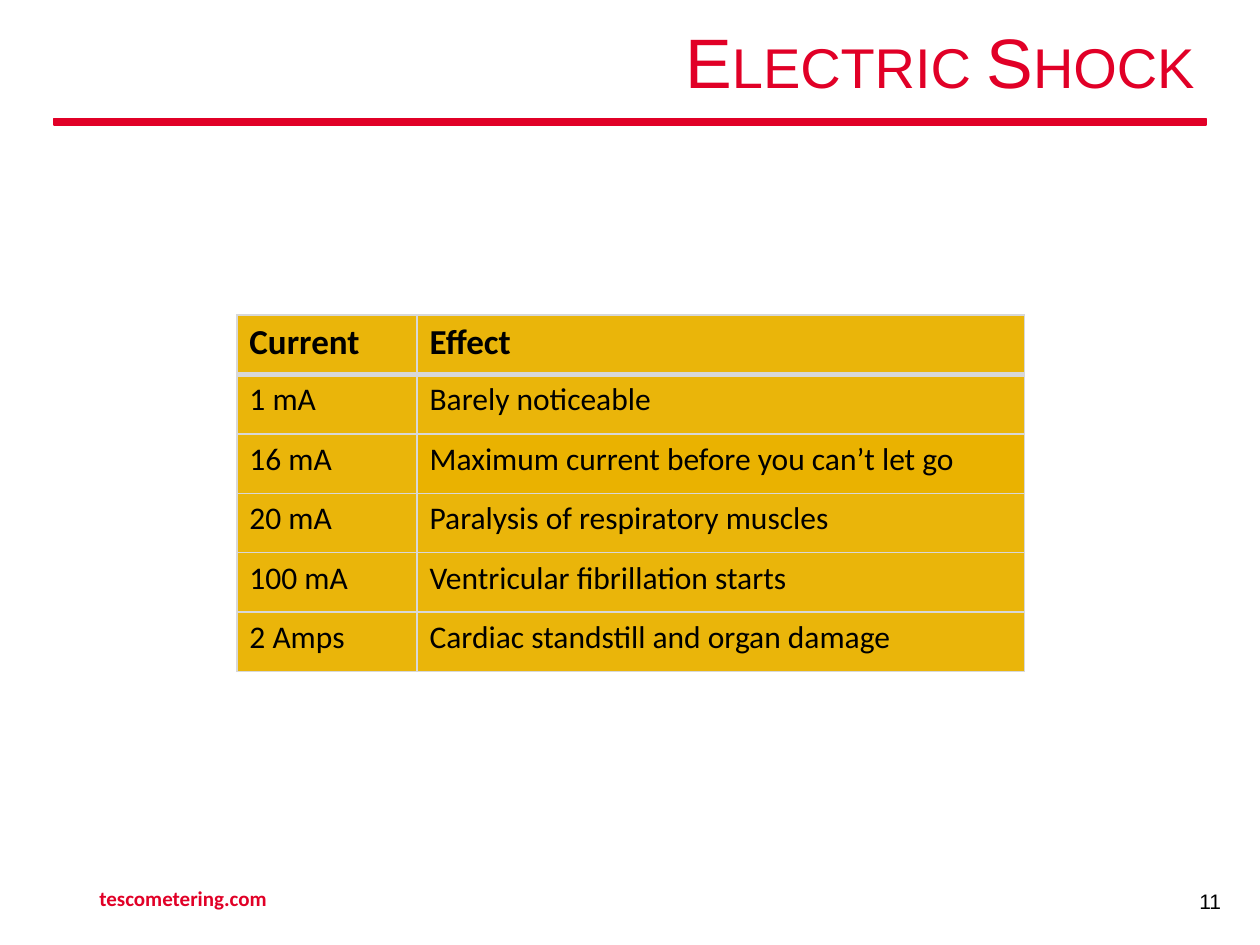
from dataclasses import dataclass
from lxml.etree import SubElement
from pptx import Presentation
from pptx.dml.color import RGBColor
from pptx.enum.shapes import MSO_SHAPE
from pptx.enum.text import MSO_ANCHOR, PP_ALIGN
from pptx.oxml import parse_xml
from pptx.oxml.ns import nsdecls, qn
from pptx.util import Inches, Pt


@dataclass(frozen=True)
class Theme:
    red: str = "E10027"
    gold: str = "EAB200"
    grid: str = "D8D8D8"
    black: str = "000000"
    heading_font: str = "Arial"
    body_font: str = "Calibri"
    title_size: int = 40
    header_size: int = 20
    body_size: int = 18
    footer_size: int = 12
    gold_alpha: int = 96


THEME = Theme()
ROWS = [
    ("Current", "Effect"),
    ("1 mA", "Barely noticeable"),
    ("16 mA", "Maximum current before you can’t let go"),
    ("20 mA", "Paralysis of respiratory muscles"),
    ("100 mA", "Ventricular fibrillation starts"),
    ("2 Amps", "Cardiac standstill and organ damage"),
]
OPAQUE_CELL = (2, 1)


def inches(box):
    return [Inches(v) for v in box]


def write(tf, text, font, size, color, bold=False):
    tf.text = text
    r = tf.paragraphs[0].runs[0]
    r.font.name = font
    r.font.size = Pt(size)
    r.font.bold = bold
    r.font.color.rgb = RGBColor.from_string(color)
    return r


def add_title(s, box, text):
    sp = s.shapes.title
    sp.left, sp.top, sp.width, sp.height = inches(box)
    tf = sp.text_frame
    r = write(tf, text, THEME.heading_font, THEME.title_size, THEME.red)
    r.font._element.set("cap", "small")
    tf.vertical_anchor = MSO_ANCHOR.MIDDLE
    p = tf.paragraphs[0]
    p.alignment = PP_ALIGN.RIGHT
    p.line_spacing = 0.9


def add_rule(s, box):
    sp = s.shapes.add_shape(MSO_SHAPE.RECTANGLE, *inches(box))
    sp.shadow.inherit = False
    sp.fill.solid()
    sp.fill.fore_color.rgb = RGBColor.from_string(THEME.red)
    sp.line.color.rgb = RGBColor.from_string(THEME.red)
    sp.line.width = Pt(1)


def add_label(s, box, text, font, color, bold=False, anchor=MSO_ANCHOR.TOP):
    tf = s.shapes.add_textbox(*inches(box)).text_frame
    tf.word_wrap = True
    tf.vertical_anchor = anchor
    write(tf, text, font, THEME.footer_size, color, bold)


def fill_cell(cell, alpha):
    cell.fill.solid()
    cell.fill.fore_color.rgb = RGBColor.from_string(THEME.gold)
    if alpha < 100:
        clr = cell._tc.tcPr.find(qn("a:solidFill")).find(qn("a:srgbClr"))
        SubElement(clr, qn("a:alpha")).set("val", str(alpha * 1000))


def border_cell(cell, top, bottom):
    widths = {"lnL": 1, "lnR": 1, "lnT": top, "lnB": bottom}
    for i, (tag, width) in enumerate(widths.items()):
        ln = parse_xml(
            f'<a:{tag} {nsdecls("a")} w="{Pt(width)}"><a:solidFill>'
            f'<a:srgbClr val="{THEME.grid}"/></a:solidFill></a:{tag}>'
        )
        cell._tc.tcPr.insert(i, ln)


def add_effects_table(s, box, first_col):
    left, top, width, height = box
    tbl = s.shapes.add_table(len(ROWS), 2, *inches(box)).table
    tbl.first_row = tbl.horz_banding = False
    for col, w in zip(tbl.columns, (first_col, width - first_col)):
        col.width = Inches(w)
    for i, row in enumerate(ROWS):
        tbl.rows[i].height = Inches(height / len(ROWS))
        header = i == 0
        size = THEME.header_size if header else THEME.body_size
        for j, text in enumerate(row):
            cell = tbl.cell(i, j)
            write(cell.text_frame, text, THEME.body_font, size, THEME.black, header)
            fill_cell(cell, 100 if (i, j) == OPAQUE_CELL else THEME.gold_alpha)
            border_cell(cell, 3 if i == 1 else 1, 3 if header else 1)


def main():
    prs = Presentation()
    prs.slide_width, prs.slide_height = Inches(10), Inches(7.5)
    s = prs.slides.add_slide(prs.slide_layouts[5])
    add_rule(s, (0.43, 0.94, 9.14, 0.05))
    add_label(s, (9.42, 7, 0.4, 0.5), "11", THEME.heading_font, THEME.black)
    add_title(s, (1.7, 0.15, 7.88, 0.74), "Electric Shock")
    add_effects_table(s, (1.88, 2.5, 6.25, 2.83), 1.43)
    add_label(s, (0.69, 6.93, 3.38, 0.4), "tescometering.com", THEME.body_font,
              THEME.red, True, MSO_ANCHOR.MIDDLE)
    prs.save("out.pptx")


if __name__ == "__main__":
    main()
